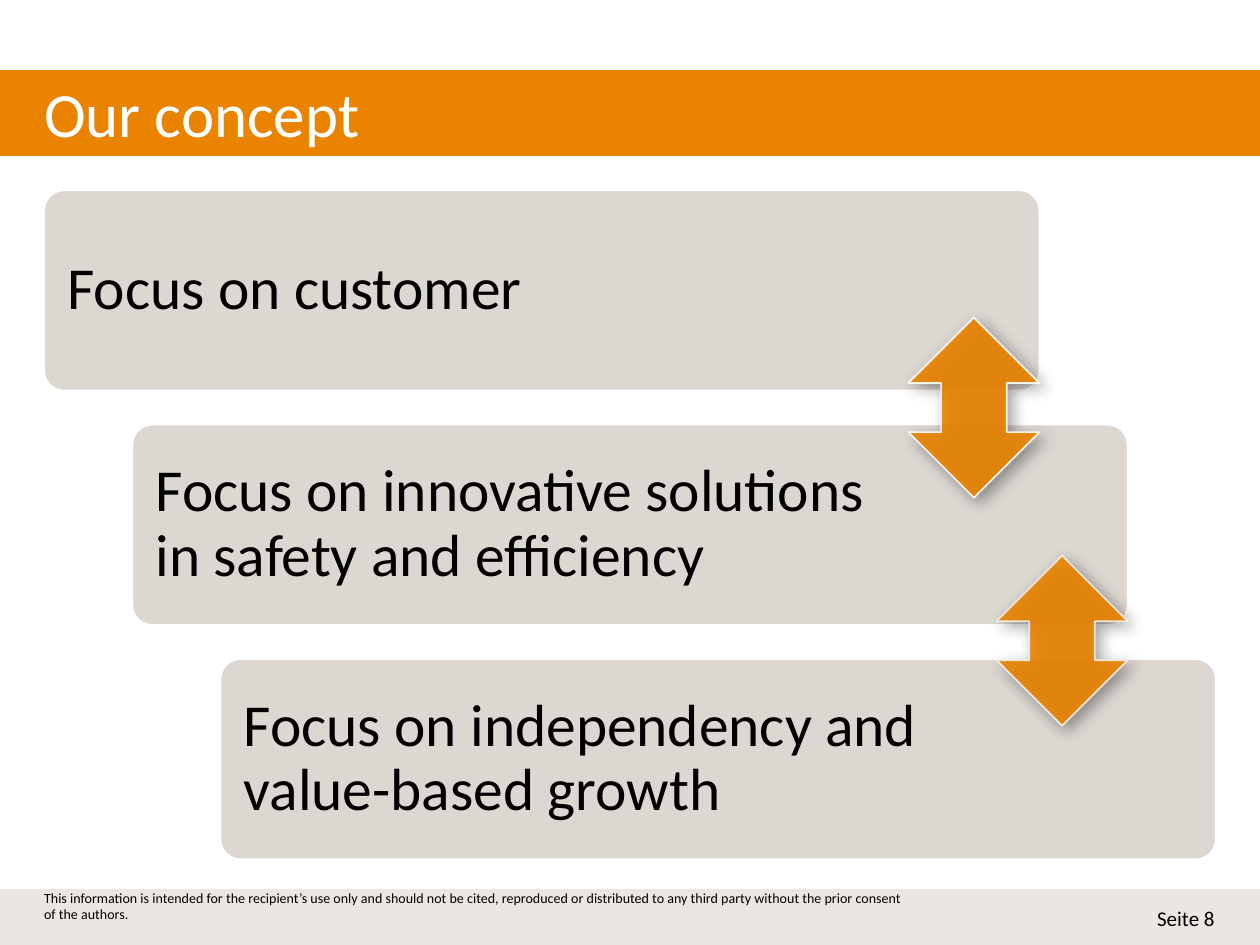
from lxml import etree
from pptx import Presentation
from pptx.dml.color import RGBColor
from pptx.enum.shapes import MSO_SHAPE
from pptx.enum.text import MSO_ANCHOR, PP_ALIGN
from pptx.oxml import parse_xml
from pptx.oxml.ns import nsdecls, qn
from pptx.util import Inches, Pt

RECT = MSO_SHAPE.RECTANGLE
ROUND = MSO_SHAPE.ROUNDED_RECTANGLE
ARROW = MSO_SHAPE.UP_DOWN_ARROW
MIDDLE = MSO_ANCHOR.MIDDLE
LEFT, RIGHT = PP_ALIGN.LEFT, PP_ALIGN.RIGHT

COLORS = {
    "orange": "E98300",
    "card": "DDD7D2",
    "footer": "EAE6E3",
    "pale": "F2F0EE",
    "white": "FFFFFF",
    "black": "000000",
}
FONT = "Calibri"

TITLE = "Our concept"
PAGE = "Seite 8"
NOTICE = (
    "This information is intended for the recipient’s use only and should "
    "not be cited, reproduced or distributed to any third party without "
    "the prior consent of the authors."
)
# Card text and the width of its text box
CARDS = [
    ("Focus on customer", 6.18),
    ("Focus on innovative solutions in safety and efficiency", 6.07),
    ("Focus on independency and value-based growth", 6.07),
]
# Top, height and outline of the arrow below each of the first two cards
ARROWS = [(2.52, 1.43, "white"), (4.41, 1.35, "pale")]

MARGIN = 0.35
CARD_TOP, CARD_W, CARD_H = 1.51, 7.9, 1.59
STEP_X, STEP_Y = 0.7, 1.86
INSET = 0.045
ARROW_W = 1.04


def rgb(name):
    return RGBColor.from_string(COLORS[name])


def add_shape(slide, kind, box, fill, line):
    shape = slide.shapes.add_shape(kind, *map(Inches, box))
    shape.shadow.inherit = False
    shape.fill.solid()
    shape.fill.fore_color.rgb = rgb(fill)
    shape.line.color.rgb = rgb(line)
    shape.line.width = Pt(1)
    return shape


def add_text(slide, box, text, size, color="black", align=LEFT,
             inset=0, bottom=None, spacing=None):
    frame = slide.shapes.add_textbox(*map(Inches, box)).text_frame
    frame.word_wrap = True
    frame.vertical_anchor = MIDDLE
    frame.margin_left = frame.margin_right = frame.margin_top = Inches(inset)
    frame.margin_bottom = Inches(inset if bottom is None else bottom)
    para = frame.paragraphs[0]
    para.alignment = align
    if spacing:
        para.line_spacing = spacing
    run = para.add_run()
    run.text = text
    run.font.name = FONT
    run.font.size = Pt(size)
    run.font.color.rgb = rgb(color)


def soften(shape):
    """Make fill and line 90% opaque and add a soft drop shadow."""
    props = shape._element.spPr
    for color in props.iter(qn("a:srgbClr")):
        etree.SubElement(color, qn("a:alpha"), val="90000")
    props.find(qn("a:effectLst")).append(parse_xml(
        f'<a:outerShdw {nsdecls("a")} blurRad="{Pt(9)}" dist="{Pt(4)}" '
        f'dir="{45 * 60000}" algn="tl" rotWithShape="0">'
        f'<a:srgbClr val="{COLORS["black"]}"><a:alpha val="40000"/>'
        '</a:srgbClr></a:outerShdw>'
    ))


def main():
    deck = Presentation()
    deck.slide_width, deck.slide_height = Inches(10), Inches(7.5)
    slide = deck.slides.add_slide(deck.slide_layouts[6])

    add_shape(slide, RECT, (0, 7.06, 10, 0.44), "footer", "footer")
    add_shape(slide, RECT, (0, 0.56, 10, 0.67), "orange", "orange")
    add_text(slide, (MARGIN, 0.56, 9.29, 0.67), TITLE, 36, "white")
    add_text(slide, (7.44, 7.15, 2.2, 0.28), PAGE, 12, align=RIGHT)
    add_text(slide, (MARGIN, 7.15, 6.93, 0.28), NOTICE, 8, bottom=0.2)

    for i, (text, width) in enumerate(CARDS):
        x, y = MARGIN + i * STEP_X, CARD_TOP + i * STEP_Y
        card = add_shape(slide, ROUND, (x, y, CARD_W, CARD_H), "card", "white")
        card.adjustments[0] = 0.1
        box = (x + INSET, y + INSET, width, CARD_H - 2 * INSET)
        add_text(slide, box, text, 34, inset=0.14, spacing=0.9)

    for i, (top, height, line) in enumerate(ARROWS):
        right = MARGIN + i * STEP_X + CARD_W
        box = (right - ARROW_W, top, ARROW_W, height)
        soften(add_shape(slide, ARROW, box, "orange", line))

    deck.save("out.pptx")


if __name__ == "__main__":
    main()
